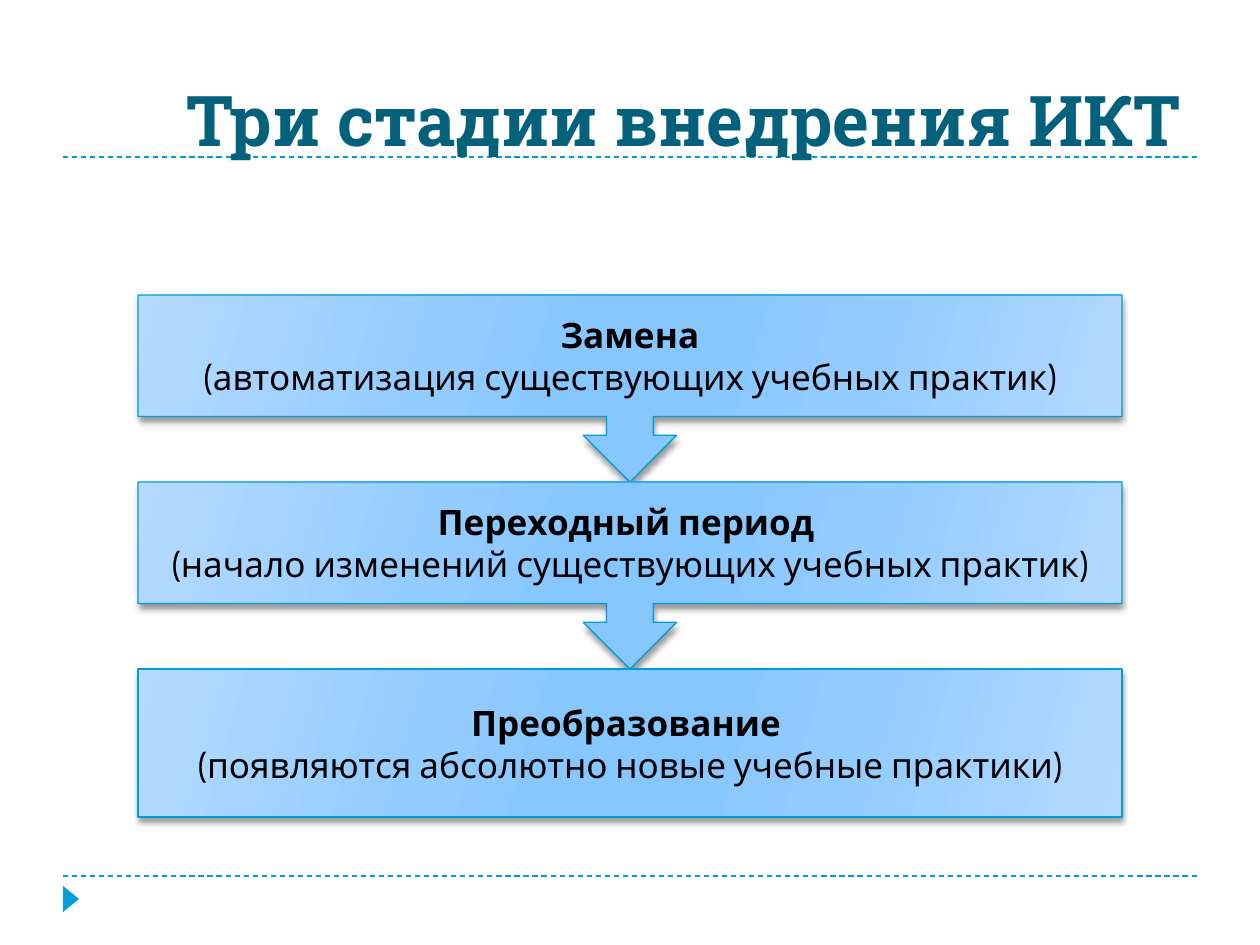
from lxml.etree import SubElement
from pptx import Presentation
from pptx.dml.color import RGBColor
from pptx.enum.dml import MSO_LINE
from pptx.enum.shapes import MSO_CONNECTOR, MSO_SHAPE
from pptx.enum.text import MSO_ANCHOR, MSO_AUTO_SIZE, PP_ALIGN
from pptx.oxml.ns import qn
from pptx.util import Emu, Pt

PX_PER_INCH = 126
COLORS = {
    "title": "04617B",
    "accent": "009DD9",
    "text": "000000",
    "edge": "B5DAFF",
    "mid": "93CCFF",
    "center": "87C7FF",
}
GRADIENT = [(0, "edge"), (30, "mid"), (45, "center"),
            (55, "center"), (73, "mid"), (100, "edge")]
GRADIENT_ANGLE = 16
STAGES = [
    ("Замена", "(автоматизация существующих учебных практик)"),
    ("Переходный период ", "(начало изменений существующих учебных практик)"),
    ("Преобразование ", "(появляются абсолютно новые учебные практики)"),
]
STAGE_LEFT, STAGE_TOP, STAGE_WIDTH, STAGE_PITCH = 138, 295, 984, 187
LAST_STAGE_HEIGHT = 148


def px(length):
    return Emu(round(length * 914400 / PX_PER_INCH))


def rgb(name):
    return RGBColor.from_string(COLORS[name])


def add_text(paragraph, text, *, font, size, color="text", bold=False,
             align=PP_ALIGN.CENTER):
    paragraph.alignment = align
    run = paragraph.add_run()
    run.text = text
    run.font.name = font
    run.font.size = Pt(size)
    run.font.bold = bold
    run.font.color.rgb = rgb(color)


def add_child(parent, tag, **attributes):
    return SubElement(parent, qn(tag), {k: str(v) for k, v in attributes.items()})


def add_color(parent, name):
    return add_child(parent, "a:srgbClr", val=COLORS[name])


def fill_gradient(shape):
    """Replace the two default stops by the stops of GRADIENT."""
    shape.fill.gradient()
    shape.fill.gradient_angle = -GRADIENT_ANGLE % 360
    stops = shape._element.spPr.find(".//" + qn("a:gsLst"))
    for stop in list(stops):
        stops.remove(stop)
    for percent, name in GRADIENT:
        add_color(add_child(stops, "a:gs", pos=percent * 1000), name)


def add_shadow(shape):
    shape.shadow.inherit = False
    effects = shape._element.spPr.find(qn("a:effectLst"))
    shadow = add_child(effects, "a:outerShdw", blurRad=Pt(3), dist=Pt(2),
                       dir=90 * 60000, rotWithShape=0)
    add_child(add_color(shadow, "text"), "a:alpha", val=40000)


def add_dashed_rule(slide, y):
    rule = slide.shapes.add_connector(
        MSO_CONNECTOR.STRAIGHT, px(63), px(y), px(1197), px(y))
    rule.line.color.rgb = rgb("accent")
    rule.line.width = Pt(0.75)
    rule.line.dash_style = MSO_LINE.DASH
    add_child(rule._element.spPr, "a:effectLst")


def add_corner_marker(slide):
    marker = slide.shapes.add_shape(
        MSO_SHAPE.ISOSCELES_TRIANGLE, px(58), px(891), px(26), px(16))
    marker.rotation = 90
    marker.shadow.inherit = False
    marker.fill.solid()
    marker.fill.fore_color.rgb = rgb("accent")
    marker.line.fill.background()


def set_title(slide, text):
    """Format the title and bring it in front of the rules."""
    title = slide.shapes.title
    title.left, title.top, title.width, title.height = map(px, (59, 20, 1134, 147))
    frame = title.text_frame
    frame.auto_size = MSO_AUTO_SIZE.NONE
    frame.vertical_anchor = MSO_ANCHOR.BOTTOM
    add_text(frame.paragraphs[0], text, font="Roboto Slab", size=40,
             color="title", bold=True, align=PP_ALIGN.RIGHT)
    slide.shapes._spTree.append(title._element)


def add_stage(slide, kind, top, height, name, detail):
    stage = slide.shapes.add_shape(
        kind, px(STAGE_LEFT), px(top), px(STAGE_WIDTH), px(height))
    fill_gradient(stage)
    stage.line.color.rgb = rgb("accent")
    stage.line.width = Pt(0.75)
    add_shadow(stage)
    frame = stage.text_frame
    frame.word_wrap = True
    frame.vertical_anchor = MSO_ANCHOR.MIDDLE
    paragraph = frame.paragraphs[0]
    add_text(paragraph, name, font="Cabin", size=20, bold=True)
    paragraph.add_line_break()
    add_text(paragraph, detail, font="Cabin", size=20)


def main():
    presentation = Presentation()
    presentation.slide_width, presentation.slide_height = px(1260), px(945)
    slide = presentation.slides.add_slide(presentation.slide_layouts[5])
    for y in (876, 157):
        add_dashed_rule(slide, y)
    add_corner_marker(slide)
    set_title(slide, "Три стадии внедрения ИКТ")
    for index, (name, detail) in enumerate(STAGES):
        if index < len(STAGES) - 1:
            kind, height = MSO_SHAPE.DOWN_ARROW_CALLOUT, STAGE_PITCH
        else:
            kind, height = MSO_SHAPE.RECTANGLE, LAST_STAGE_HEIGHT
        add_stage(slide, kind, STAGE_TOP + index * STAGE_PITCH, height, name, detail)
    presentation.save("out.pptx")


if __name__ == "__main__":
    main()
